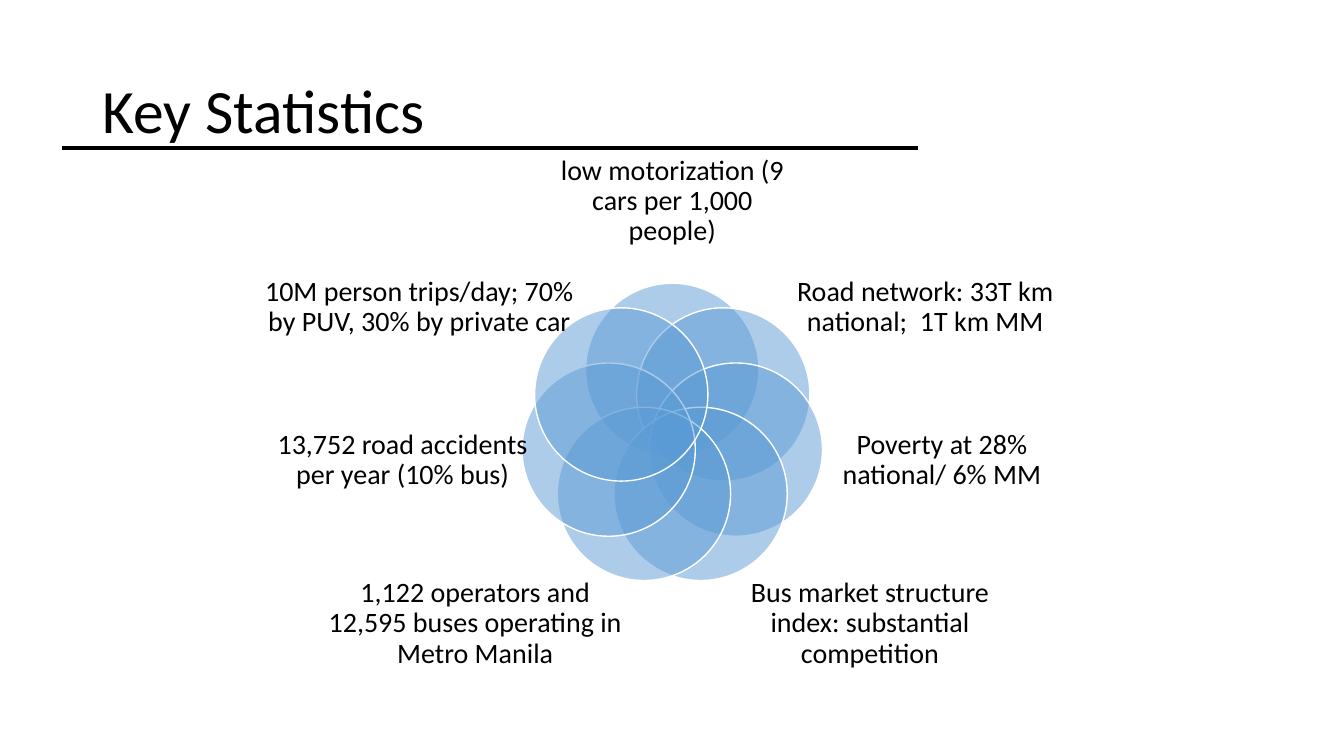
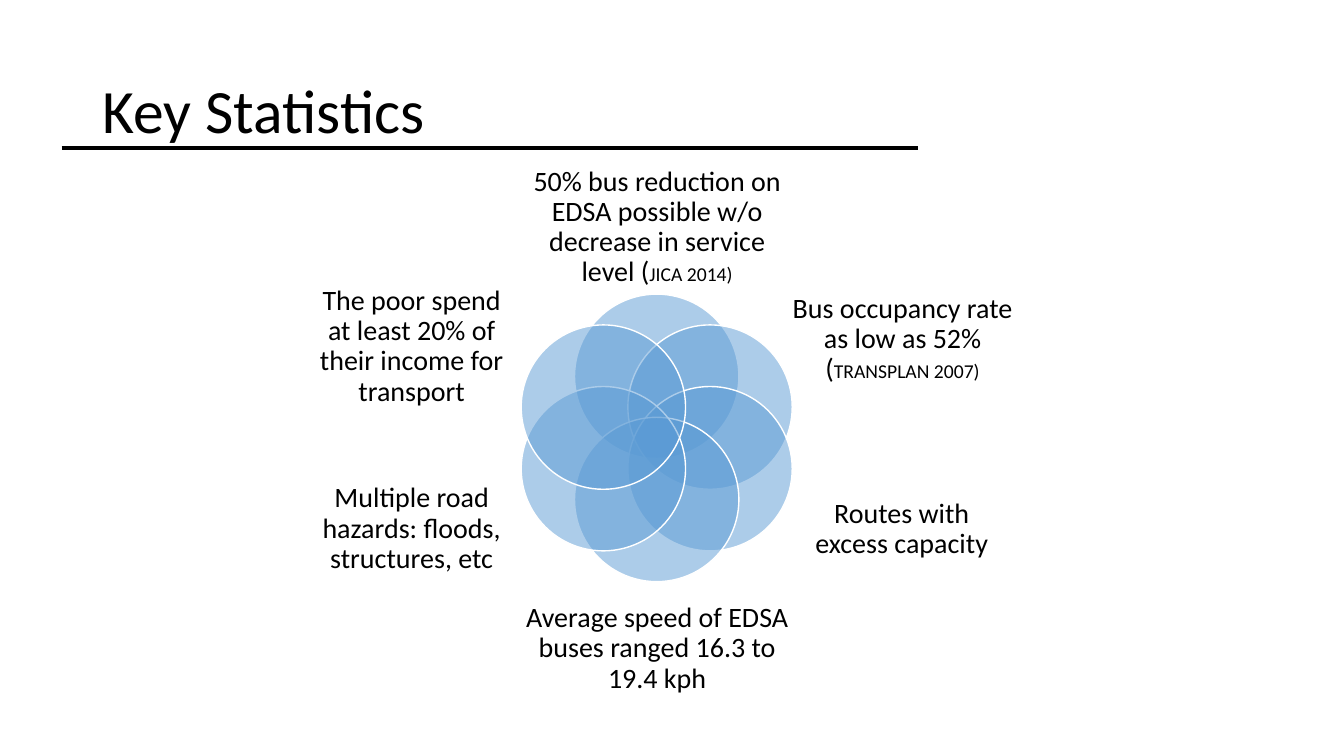
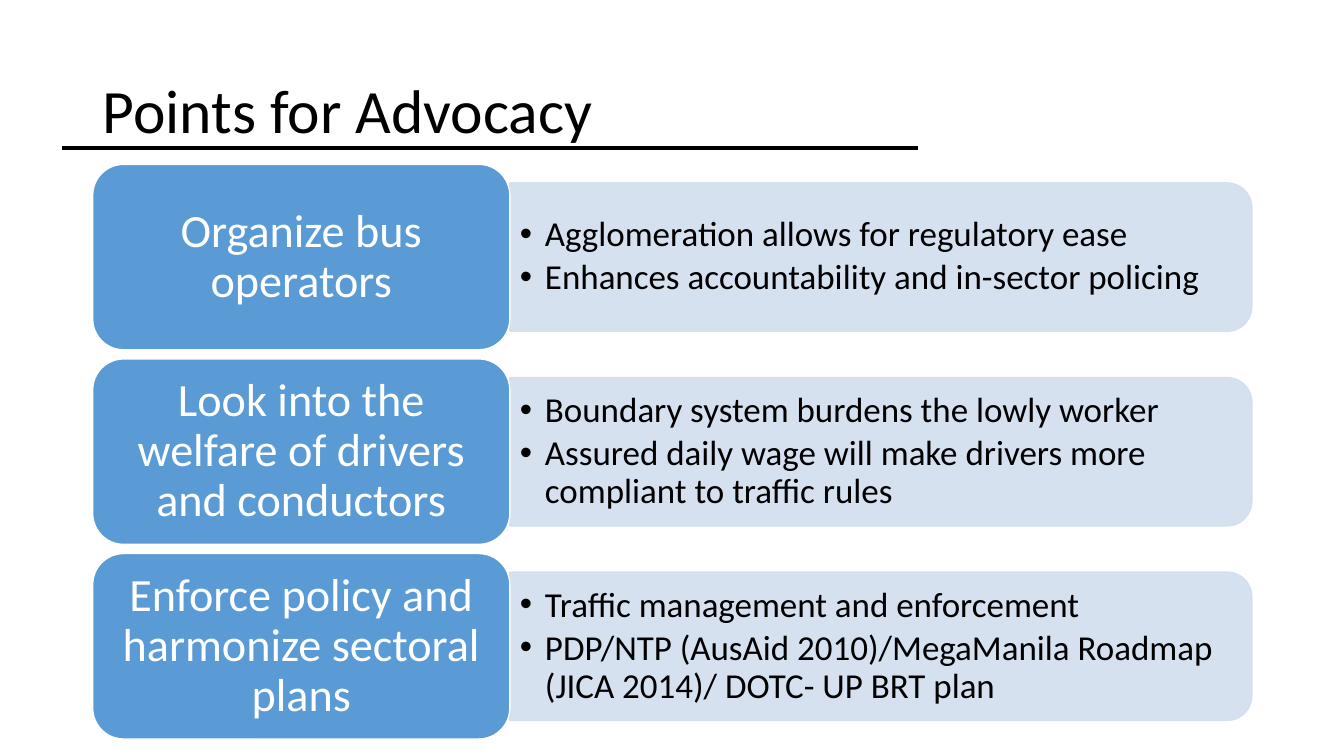
from dataclasses import dataclass
from math import cos, pi, sin

from lxml.etree import SubElement
from pptx import Presentation
from pptx.dml.color import RGBColor
from pptx.enum.shapes import MSO_CONNECTOR, MSO_SHAPE
from pptx.enum.text import MSO_ANCHOR, PP_ALIGN
from pptx.oxml.ns import qn
from pptx.util import Pt

BLACK = RGBColor(0x00, 0x00, 0x00)
WHITE = RGBColor(0xFF, 0xFF, 0xFF)
BLUE = RGBColor(0x5B, 0x9B, 0xD5)
PALE_BLUE = RGBColor(0xD2, 0xDE, 0xEF)
FONT = "Calibri"

BLOCK_LEFT, BLOCK_TOP, BLOCK_W, BLOCK_H = 66.2, 117.4, 298, 132.5
ROW_PITCH = 139
BAR_W, BAR_H = 530, 106
DETAIL_W, DETAIL_H = 525, 96


@dataclass
class Label:
    left: float
    top: float
    width: float
    height: float
    text: str
    note: str = ""


@dataclass
class Flower:
    center_x: float
    center_y: float
    orbit: float
    diameter: float
    labels: list[Label]


@dataclass
class Point:
    heading: str
    details: list[str]


BASICS = Flower(480.2, 310.8, 46.6, 123.8, [
    Label(392.4, 105.8, 175.7, 76.3, "low motorization (9 cars per 1,000 people)"),
    Label(558, 177.8, 205.9, 83.5, "Road network: 33T km national;  1T km MM"),
    Label(581, 284.4, 183.6, 89.3, "Poverty at 28% national/ 6% MM"),
    Label(517.7, 404.6, 207.4, 82.1,
          "Bus market structure index: substantial competition"),
    Label(227.5, 404.6, 223.9, 82.1,
          "1,122 operators and 12,595 buses operating in Metro Manila"),
    Label(183.6, 284.4, 208.1, 89.3, "13,752 road accidents per year (10% bus)"),
    Label(183.6, 177.8, 231.8, 83.5,
          "10M person trips/day; 70% by PUV, 30% by private car"),
])

SERVICE = Flower(469.1, 312.8, 44, 117.4, [
    Label(373.7, 122.4, 191.5, 79.9,
          "50% bus reduction on EDSA possible w/o decrease in service level (",
          "JICA 2014)"),
    Label(565.9, 198.7, 157.7, 87.8,
          "Bus occupancy rate as low as 52% (", "TRANSPLAN 2007)"),
    Label(574.6, 329, 139, 97.9, "Routes with excess capacity"),
    Label(373.7, 423.4, 191.5, 79.9,
          "Average speed of EDSA buses ranged 16.3 to 19.4 kph"),
    Label(224.6, 329, 139, 97.9, "Multiple road hazards: floods, structures, etc"),
    Label(224.6, 198.7, 139, 97.9,
          "The poor spend at least 20% of their income for transport"),
])

POINTS = [
    Point("Organize bus operators", [
        "Agglomeration allows for regulatory ease",
        "Enhances accountability and in-sector policing"]),
    Point("Look into the welfare of drivers and conductors", [
        "Boundary system burdens the lowly worker",
        "Assured daily wage will make drivers more compliant to traffic rules"]),
    Point("Enforce policy and harmonize sectoral plans", [
        "Traffic management and enforcement",
        "PDP/NTP (AusAid 2010)/MegaManila Roadmap (JICA 2014)/ DOTC- UP BRT plan"]),
]


def set_frame(tf, margin_x: float, margin_y: float) -> None:
    tf.word_wrap = True
    tf.vertical_anchor = MSO_ANCHOR.MIDDLE
    tf.margin_left = tf.margin_right = Pt(margin_x)
    tf.margin_top = tf.margin_bottom = Pt(margin_y)


def add_text_box(slide, left: float, top: float, width: float, height: float,
                 margin_x: float = 0, margin_y: float = 0):
    box = slide.shapes.add_textbox(Pt(left), Pt(top), Pt(width), Pt(height))
    set_frame(box.text_frame, margin_x, margin_y)
    return box.text_frame


def format_paragraph(p, size: float, color: RGBColor = BLACK,
                     align: PP_ALIGN = PP_ALIGN.LEFT) -> None:
    p.alignment = align
    p.line_spacing = 0.9
    for r in p.runs:
        r.font.name = FONT
        r.font.size = Pt(size)
        r.font.color.rgb = color


def add_bullet(p) -> None:
    pPr = p._p.get_or_add_pPr()
    pPr.set("marL", str(Pt(18)))
    pPr.set("indent", str(Pt(-18)))
    SubElement(pPr, qn("a:buFont"), typeface="Arial")
    SubElement(pPr, qn("a:buChar"), char="•")


def add_filled(slide, kind: MSO_SHAPE, left: float, top: float, width: float,
               height: float, fill: RGBColor, line: RGBColor, opacity: int = 100):
    sp = slide.shapes.add_shape(kind, Pt(left), Pt(top), Pt(width), Pt(height))
    sp.shadow.inherit = False
    sp.fill.solid()
    sp.fill.fore_color.rgb = fill
    sp.line.color.rgb = line
    sp.line.width = Pt(1)
    if opacity < 100:
        for clr in sp._element.spPr.iter(qn("a:srgbClr")):
            if clr.get("val") == str(fill):
                SubElement(clr, qn("a:alpha"), val=str(opacity * 1000))
    return sp


def add_titled_slide(prs, title: str):
    slide = prs.slides.add_slide(prs.slide_layouts[6])
    tf = add_text_box(slide, 66.2, 28.8, 828, 104.4, 7.2, 3.6)
    tf.text = title
    format_paragraph(tf.paragraphs[0], 44)
    rule = slide.shapes.add_connector(
        MSO_CONNECTOR.STRAIGHT, Pt(44), Pt(105.8), Pt(656), Pt(105.8))
    rule.line.color.rgb = BLACK
    rule.line.width = Pt(3)
    SubElement(rule._element.spPr, qn("a:effectLst"))
    return slide


def add_label(slide, label: Label) -> None:
    tf = add_text_box(slide, label.left, label.top, label.width, label.height)
    p = tf.paragraphs[0]
    p.text = label.text
    if label.note:
        p.add_run().text = label.note
    format_paragraph(p, 20, align=PP_ALIGN.CENTER)
    for r in p.runs[1:]:
        r.font.size = Pt(14)


def add_flower(slide, flower: Flower) -> None:
    radius = flower.diameter / 2
    for i, label in enumerate(flower.labels):
        angle = 2 * pi * i / len(flower.labels)
        add_filled(slide, MSO_SHAPE.OVAL,
                   flower.center_x + flower.orbit * sin(angle) - radius,
                   flower.center_y - flower.orbit * cos(angle) - radius,
                   flower.diameter, flower.diameter, BLUE, WHITE, 50)
        add_label(slide, label)


def add_point(slide, point: Point, top: float) -> None:
    bar_left = BLOCK_LEFT + BLOCK_W
    middle = top + BLOCK_H / 2
    bar = add_filled(slide, MSO_SHAPE.ROUND_2_SAME_RECTANGLE,
                     bar_left + (BAR_W - BAR_H) / 2, middle - BAR_W / 2,
                     BAR_H, BAR_W, PALE_BLUE, PALE_BLUE, 90)
    bar.rotation = 90

    tf = add_text_box(slide, bar_left, middle - DETAIL_H / 2,
                      DETAIL_W, DETAIL_H, 7.2, 3.6)
    tf.text = "\n".join(point.details)
    for i, p in enumerate(tf.paragraphs):
        format_paragraph(p, 25)
        p.space_before = Pt(3.75 if i else 0)
        add_bullet(p)

    block = add_filled(slide, MSO_SHAPE.ROUNDED_RECTANGLE, BLOCK_LEFT, top,
                       BLOCK_W, BLOCK_H, BLUE, WHITE)
    set_frame(block.text_frame, 10, 5)
    block.text_frame.text = point.heading
    format_paragraph(block.text_frame.paragraphs[0], 33, WHITE, PP_ALIGN.CENTER)


def main() -> None:
    prs = Presentation()
    prs.slide_width, prs.slide_height = Pt(960), Pt(540)

    for flower in (BASICS, SERVICE):
        add_flower(add_titled_slide(prs, "Key Statistics"), flower)

    slide = add_titled_slide(prs, "Points for Advocacy")
    for i, point in enumerate(POINTS):
        add_point(slide, point, BLOCK_TOP + i * ROW_PITCH)

    prs.save("out.pptx")


if __name__ == "__main__":
    main()
